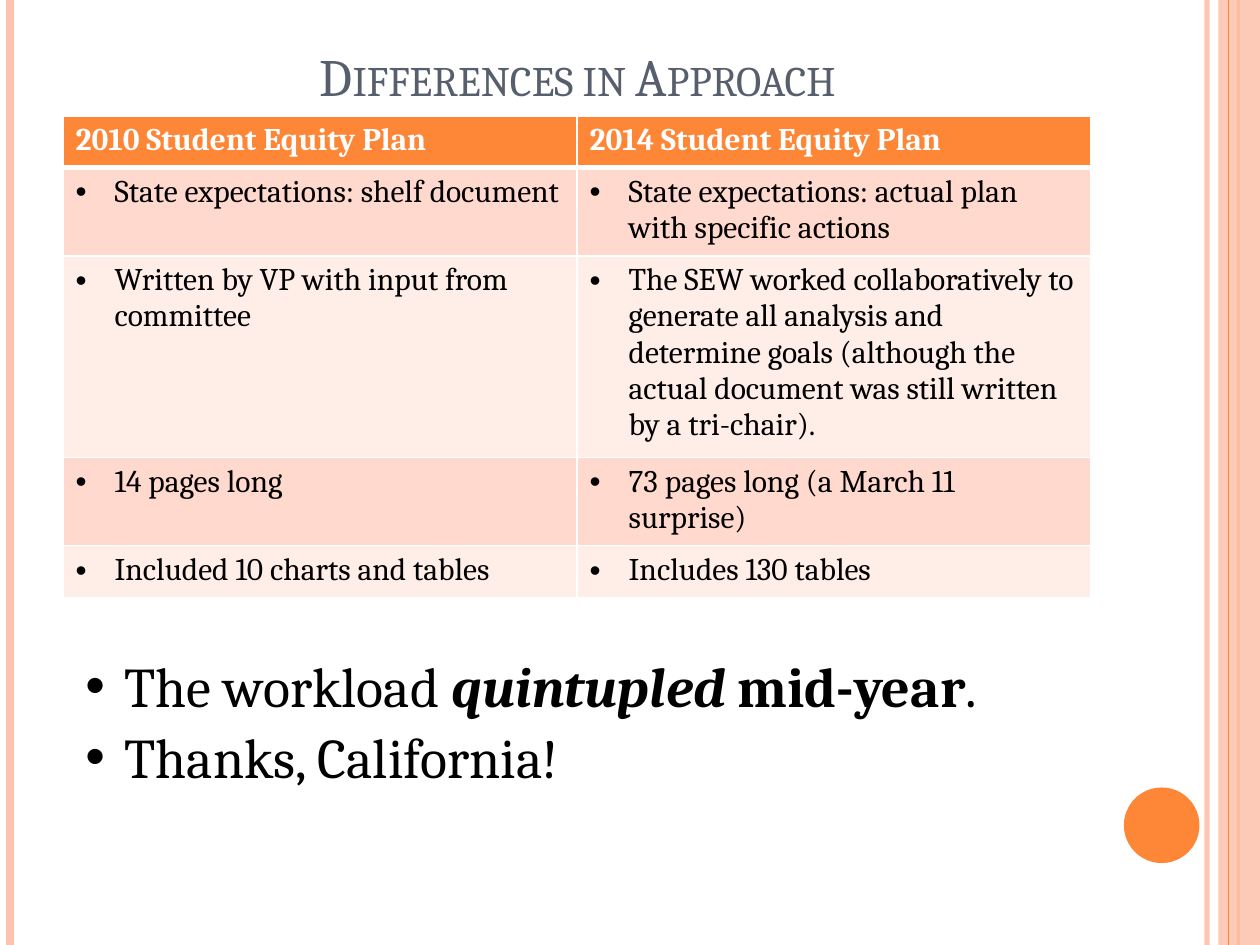
from typing import NamedTuple

from lxml.etree import SubElement
from pptx import Presentation
from pptx.dml.color import RGBColor
from pptx.enum.shapes import MSO_CONNECTOR, MSO_SHAPE
from pptx.enum.text import MSO_ANCHOR, PP_ALIGN
from pptx.oxml.ns import qn
from pptx.util import Inches, Pt

ORANGE, PEACH, WHITE, BLACK, SLATE = "FE8637", "FEC3AE", "FFFFFF", "000000", "575F6D"
BANDS = ("FFD9CE", "FFEDE8")
INDENT = Inches(0.31)


class Stripe(NamedTuple):
    x: float
    color: str
    width: float
    alpha: int = 100


class Span(NamedTuple):
    text: str
    style: dict = {}


ROWS = [
    ("2010 Student Equity Plan", "2014 Student Equity Plan"),
    ("State expectations: shelf document",
     "State expectations: actual plan with specific actions"),
    ("Written by VP with input from committee",
     "The SEW worked collaboratively to generate all analysis and determine goals "
     "(although the actual document was still written by a tri-chair)."),
    ("14 pages long", "73 pages long (a March 11 surprise)"),
    ("Included 10 charts and tables", "Includes 130 tables"),
]
REMARKS = [
    [Span("The workload "), Span("quintupled ", {"bold": True, "italic": True}),
     Span("mid-year", {"bold": True}), Span(".")],
    [Span("Thanks, California!")],
]


def rgb(color: str) -> RGBColor:
    return RGBColor.from_string(color)


def paint(fill, color: str) -> None:
    fill.solid()
    fill.fore_color.rgb = rgb(color)


def set_alpha(shape, percent: int) -> None:
    """Make the first colour of the shape partly transparent."""
    clr = next(shape._element.spPr.iter(qn("a:srgbClr")))
    SubElement(clr, qn("a:alpha"), val=str(percent * 1000))


def add_stripe(s, stripe: Stripe) -> None:
    x = Inches(stripe.x)
    line = s.shapes.add_connector(MSO_CONNECTOR.STRAIGHT, x, 0, x, Inches(7.5))
    line.line.color.rgb = rgb(stripe.color)
    line.line.width = Pt(stripe.width)
    if stripe.alpha < 100:
        set_alpha(line, stripe.alpha)
    SubElement(line._element.spPr, qn("a:effectLst"))


def add_block(s, kind: MSO_SHAPE, box: tuple, color: str):
    block = s.shapes.add_shape(kind, *map(Inches, box))
    block.shadow.inherit = False
    paint(block.fill, color)
    block.line.fill.background()
    return block


def add_text_frame(s, box: tuple):
    tf = s.shapes.add_textbox(*map(Inches, box)).text_frame
    tf.word_wrap = True
    tf.vertical_anchor = MSO_ANCHOR.TOP
    return tf


def add_span(p, span: Span, size: float, color: str):
    r = p.add_run()
    r.text = span.text
    style = {"name": "Cambria", "size": Pt(size), "bold": False, "italic": False}
    for name, value in (style | span.style).items():
        setattr(r.font, name, value)
    r.font.color.rgb = rgb(color)
    return r


def add_bullet(p) -> None:
    pPr = p._p.get_or_add_pPr()
    pPr.set("marL", str(INDENT))
    pPr.set("indent", str(-INDENT))
    SubElement(pPr, qn("a:buFont"), typeface="Arial")
    SubElement(pPr, qn("a:buChar"), char="•")


def set_borders(cell, widths: dict) -> None:
    tcPr = cell._tc.get_or_add_tcPr()
    for side, width in widths.items():
        ln = SubElement(tcPr, qn(f"a:ln{side}"), w=str(Pt(width)))
        SubElement(SubElement(ln, qn("a:solidFill")), qn("a:srgbClr"), val=WHITE)


def add_plan_table(s) -> None:
    frame = s.shapes.add_table(len(ROWS), 2, Inches(0.5), Inches(0.92),
                               Inches(8.16), Inches(0.41 * len(ROWS)))
    for i, row in enumerate(ROWS):
        for j, text in enumerate(row):
            cell = frame.table.cell(i, j)
            header = i == 0
            set_borders(cell, {"L": 1, "R": 1, "T": 3 if i == 1 else 1,
                               "B": 3 if header else 1})
            paint(cell.fill, ORANGE if header else BANDS[(i - 1) % 2])
            p = cell.text_frame.paragraphs[0]
            add_span(p, Span(text, {"bold": header}), 18, WHITE if header else BLACK)
            if not header:
                add_bullet(p)


def add_title(s) -> None:
    p = add_text_frame(s, (0.5, 0.3, 8.17, 1.25)).paragraphs[0]
    p.alignment = PP_ALIGN.CENTER
    r = add_span(p, Span("Differences in Approach"), 30, SLATE)
    r.font._element.set("cap", "small")


def add_remarks(s) -> None:
    tf = add_text_frame(s, (0.58, 5.12, 8.08, 1.72))
    for i, spans in enumerate(REMARKS):
        p = tf.add_paragraph() if i else tf.paragraphs[0]
        p.space_after = Pt(2)
        add_bullet(p)
        for span in spans:
            add_span(p, span, 32, BLACK)


def main() -> None:
    prs = Presentation()
    prs.slide_width, prs.slide_height = Inches(10), Inches(7.5)
    s = prs.slides.add_slide(prs.slide_layouts[6])
    paint(s.background.fill, WHITE)
    for stripe in (Stripe(9.58, PEACH, 3, 93), Stripe(0.08, PEACH, 4.5),
                   Stripe(9.83, ORANGE, 1.5)):
        add_stripe(s, stripe)
    set_alpha(add_block(s, MSO_SHAPE.RECTANGLE, (9.67, 0, 0.33, 7.5), PEACH), 87)
    add_stripe(s, Stripe(9.75, ORANGE, 0.75))
    add_block(s, MSO_SHAPE.OVAL, (8.92, 6.25, 0.6, 0.6), ORANGE)
    add_title(s)
    add_plan_table(s)
    add_remarks(s)
    prs.save("out.pptx")


if __name__ == "__main__":
    main()
